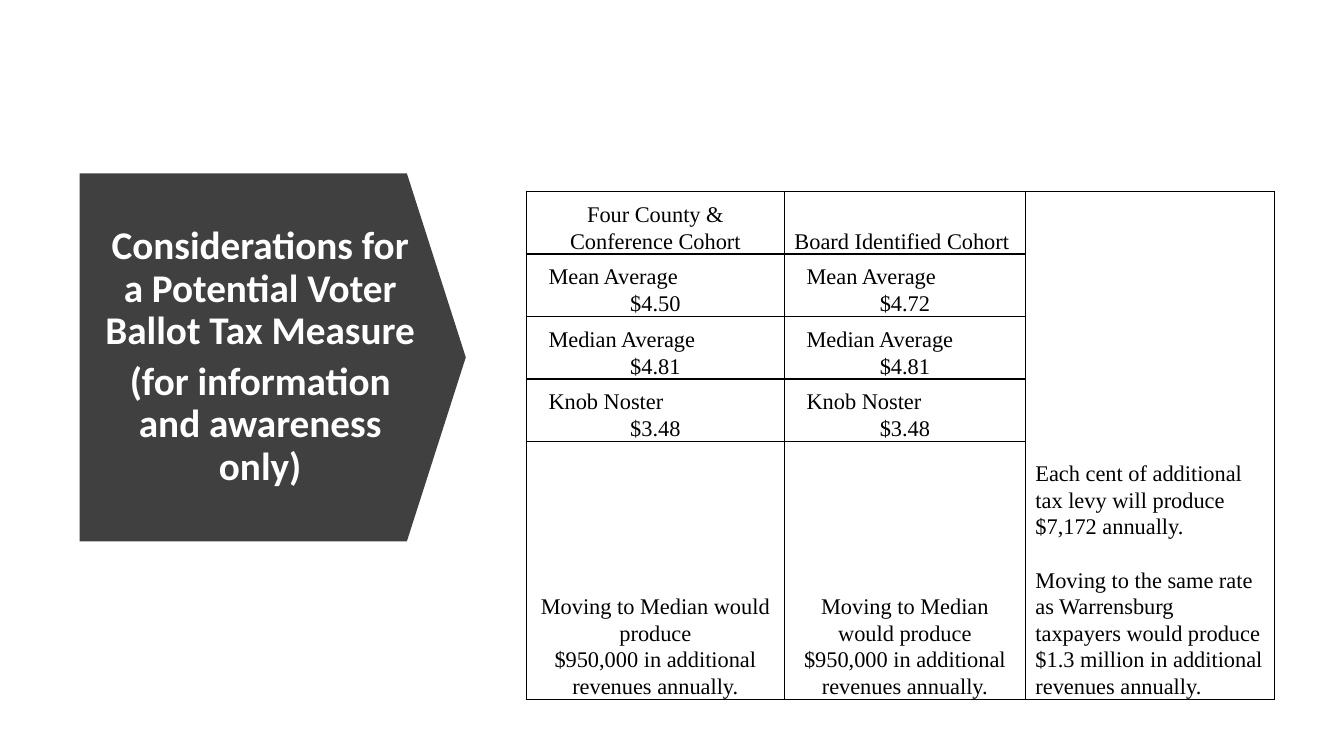
"""Build the slide on considerations for a potential voter ballot tax measure."""
from lxml.etree import SubElement
from pptx import Presentation
from pptx.dml.color import RGBColor
from pptx.enum.shapes import MSO_SHAPE as SHAPE
from pptx.enum.text import MSO_ANCHOR as ANCHOR, MSO_AUTO_SIZE as AUTO, PP_ALIGN as ALIGN
from pptx.oxml.ns import qn
from pptx.util import Inches, Pt

COLORS = {"arrow": "404040", "title": "FFFFFF", "text": "000000", "border": "000000"}
TITLE = ["Considerations for a Potential Voter Ballot Tax Measure",
         "(for information and awareness only)"]
HEADERS = ["Four County & Conference Cohort", "Board Identified Cohort"]
RATES = [("Mean Average", "$4.50", "$4.72"),
         ("Median Average", "$4.81", "$4.81"),
         ("Knob Noster", "$3.48", "$3.48")]
MEDIAN = ["Moving to Median would produce", "$950,000 in additional revenues annually."]
LEVY = ["Each cent of additional tax levy will produce $7,172 annually.",
        "Moving to the same rate as Warrensburg taxpayers would produce "
        "$1.3 million in additional revenues annually."]
COL_WIDTHS = [2.56, 2.39, 2.47]
ROW_HEIGHTS = [0.62] * 4 + [2.56]


def rgb(name):
    return RGBColor.from_string(COLORS[name])


def write(tf, lines, aligns, font, size, color, spacing, bold=False):
    tf.text = "\n".join(lines)
    for p, align in zip(tf.paragraphs, aligns):
        p.alignment, p.line_spacing = align, spacing
        for r in p.runs:
            r.font.name, r.font.size, r.font.bold = font, Pt(size), bold
            r.font.color.rgb = rgb(color)


def add_borders(cell):
    tc_pr = cell._tc.get_or_add_tcPr()
    for side in ("lnL", "lnR", "lnT", "lnB"):
        ln = SubElement(tc_pr, qn(f"a:{side}"), w=str(Pt(1)))
        fill = SubElement(ln, qn("a:solidFill"))
        SubElement(fill, qn("a:srgbClr"), val=COLORS["border"])


def fill_cell(cell, lines, *aligns):
    write(cell.text_frame, lines, aligns, "Times New Roman", 16, "text", 1.07)


def add_title(s):
    title = s.shapes.title
    title.left, title.top, title.width, title.height = map(Inches, (0.94, 2.15, 3.28, 2.79))
    tf = title.text_frame
    tf.word_wrap, tf.auto_size, tf.vertical_anchor = True, AUTO.NONE, ANCHOR.MIDDLE
    write(tf, TITLE, [ALIGN.CENTER] * 2, "Calibri", 28, "title", 0.9, True)
    for p in tf.paragraphs:
        p.space_before, p.space_after = Pt(0), Pt(6)
    arrow = s.shapes.add_shape(SHAPE.PENTAGON, *map(Inches, (0.79, 1.72, 3.83, 3.65)))
    arrow.adjustments[0] = 0.16
    arrow.shadow.inherit = False
    arrow.fill.solid()
    arrow.fill.fore_color.rgb = rgb("arrow")
    arrow.line.fill.background()
    title.element.addprevious(arrow.element)


def add_rates(s):
    size = sum(COL_WIDTHS), sum(ROW_HEIGHTS)
    table = s.shapes.add_table(len(ROW_HEIGHTS), len(COL_WIDTHS),
                               *map(Inches, (5.22, 1.9, *size))).table
    table.first_row = table.horz_banding = False
    for col, width in zip(table.columns, COL_WIDTHS):
        col.width = Inches(width)
    for row, height in zip(table.rows, ROW_HEIGHTS):
        row.height = Inches(height)
    for cell in table.iter_cells():
        add_borders(cell)
        cell.fill.background()
        cell.vertical_anchor = ANCHOR.BOTTOM
        cell.margin_left = cell.margin_right = Inches(0.1)
        cell.margin_top = cell.margin_bottom = 0
    table.cell(0, 2).merge(table.cell(len(ROW_HEIGHTS) - 1, 2))

    for c, (header, align) in enumerate(zip(HEADERS, (ALIGN.CENTER, ALIGN.LEFT))):
        fill_cell(table.cell(0, c), [header], align)
        for i, (label, *values) in enumerate(RATES, 1):
            cell = table.cell(i, c)
            fill_cell(cell, [label, values[c]], ALIGN.LEFT, ALIGN.CENTER)
            p_pr = cell.text_frame.paragraphs[0]._p.get_or_add_pPr()
            p_pr.set("marL", str(Inches(0.12)))
        fill_cell(table.cell(len(RATES) + 1, c), MEDIAN, ALIGN.CENTER, ALIGN.CENTER)
    levy = table.cell(0, 2)
    fill_cell(levy, LEVY, ALIGN.LEFT, ALIGN.LEFT)
    levy.text_frame.paragraphs[1].space_before = Pt(19)


def main():
    prs = Presentation()
    prs.slide_width, prs.slide_height = Inches(13.33), Inches(7.5)
    s = prs.slides.add_slide(prs.slide_layouts[5])
    add_title(s)
    add_rates(s)
    prs.save("out.pptx")


if __name__ == "__main__":
    main()
